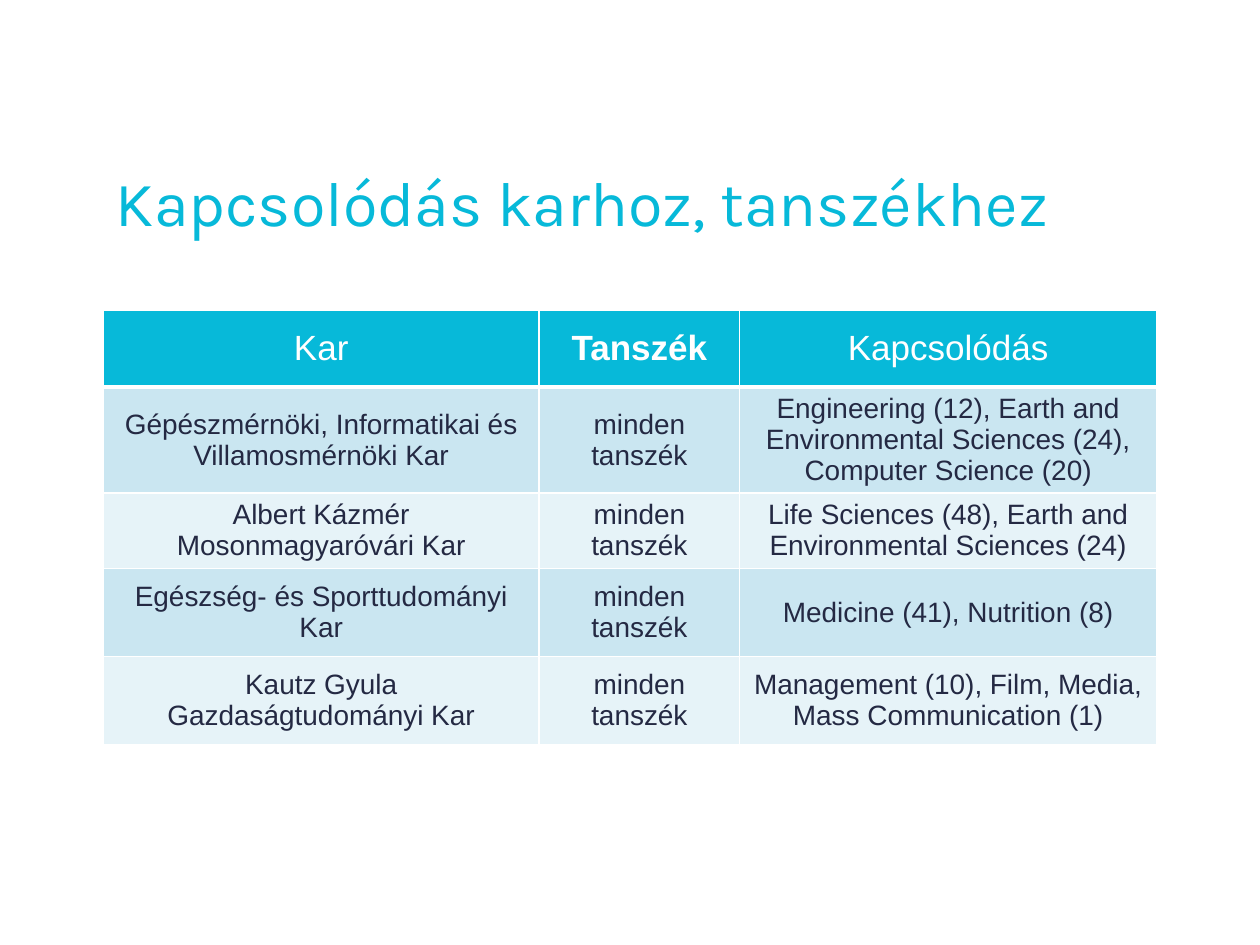
from lxml import etree
from pptx import Presentation
from pptx.dml.color import RGBColor
from pptx.enum import text
from pptx.oxml import ns
from pptx.util import Cm, Pt

CYAN = RGBColor(0x07, 0xB9, 0xD9)
NAVY = RGBColor(0x24, 0x29, 0x43)
WHITE = RGBColor(0xFF, 0xFF, 0xFF)
BANDS = [RGBColor(0xE6, 0xF3, 0xF8), RGBColor(0xCA, 0xE6, 0xF1)]

ROWS = [
    ("Kar", "Tanszék", "Kapcsolódás"),
    ("Gépészmérnöki, Informatikai és Villamosmérnöki Kar", "minden tanszék",
     "Engineering (12), Earth and Environmental Sciences (24), Computer Science (20)"),
    ("Albert Kázmér Mosonmagyaróvári Kar", "minden tanszék",
     "Life Sciences (48), Earth and Environmental Sciences (24)"),
    ("Egészség- és Sporttudományi Kar", "minden tanszék",
     "Medicine (41), Nutrition (8)"),
    ("Kautz Gyula Gazdaságtudományi Kar", "minden tanszék",
     "Management (10), Film, Media, Mass Communication (1)"),
]
WIDTHS = [Cm(8.79), Cm(4.04), Cm(8.41)]
HEIGHTS = [Cm(1.54), Cm(2.1), Cm(1.52), Cm(1.78), Cm(1.78)]
LEFT = Cm(2.08)


def add_border(cell, side, width):
    ln = etree.SubElement(cell._tc.get_or_add_tcPr(), ns.qn("a:ln" + side), w=str(Pt(width)))
    fill = etree.SubElement(ln, ns.qn("a:solidFill"))
    etree.SubElement(fill, ns.qn("a:srgbClr"), val=str(WHITE))


prs = Presentation()
prs.slide_width, prs.slide_height = Cm(25.4), Cm(19.05)
s = prs.slides.add_slide(prs.slide_layouts[5])

title = s.shapes.title
title.left, title.top, title.width, title.height = LEFT, Cm(3.4), sum(WIDTHS), Cm(1.52)
tf = title.text_frame
tf.text = "Kapcsolódás karhoz, tanszékhez"
tf.vertical_anchor = text.MSO_ANCHOR.MIDDLE
tf.auto_size = text.MSO_AUTO_SIZE.NONE
p = tf.paragraphs[0]
p.alignment = text.PP_ALIGN.LEFT
p.line_spacing = 0.9
r = p.runs[0]
r.font.name, r.font.size = "Karla", Pt(36)
r.font.color.rgb = CYAN

table = s.shapes.add_table(len(ROWS), len(WIDTHS), LEFT, Cm(6.26),
                           sum(WIDTHS), sum(HEIGHTS)).table
for column, width in zip(table.columns, WIDTHS):
    column.width = width
for row, height in zip(table.rows, HEIGHTS):
    row.height = height

for i, values in enumerate(ROWS):
    header = i == 0
    for j, value in enumerate(values):
        cell = table.cell(i, j)
        for side in "LRTB":
            thick = (i, side) in [(0, "B"), (1, "T")]
            add_border(cell, side, 3 if thick else 1)
        cell.fill.solid()
        cell.fill.fore_color.rgb = CYAN if header else BANDS[i % 2]
        cell.vertical_anchor = text.MSO_ANCHOR.MIDDLE
        cell.text_frame.text = value
        p = cell.text_frame.paragraphs[0]
        p.alignment = text.PP_ALIGN.CENTER
        r = p.runs[0]
        r.font.name = "Arial"
        r.font.size = Pt(20 if header else 16)
        r.font.bold = header and j == 1
        r.font.color.rgb = WHITE if header else NAVY

prs.save("out.pptx")
